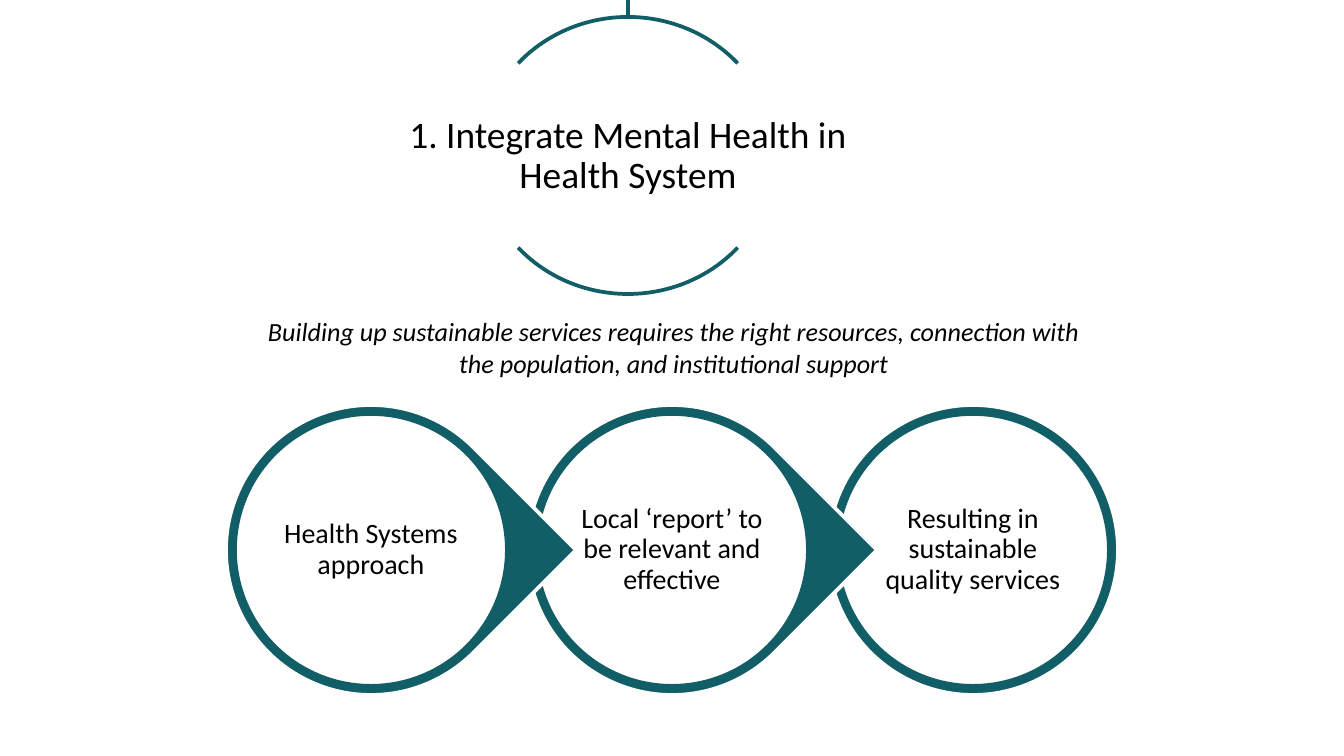
from lxml import etree
from pptx import Presentation
from pptx import util as u
from pptx.dml.color import RGBColor
from pptx.enum import shapes, text
from pptx.oxml.ns import qn

TITLE = "1. Integrate Mental Health in Health System"
SUBTITLE = ("Building up sustainable services requires the right resources, "
            "connection with the population, and institutional support")
STEPS = [
    "Health Systems approach",
    "Local ‘report’ to be relevant and effective",
    "Resulting in sustainable quality services",
]
COLORS = {"teal": "115E67", "white": "FFFFFF", "black": "000000"}
FONT = "Calibri"

PX = 914400 / 134.4
CENTER_X = 628                         # axis of the title arcs
ARC_TOP, ARC_W, ARC_H = 17, 294, 277
ARC_ANGLES = [(220, 320), (40, 140)]   # upper arc, lower arc
TITLE_BOX = (407, 90, 442, 133)
SUBTITLE_BOX = (241, 309, 866, 77)
STEP_X, STEP_Y, STEP_GAP = 371, 550, 301
OUTER, INNER = 290, 272


def px(n):
    return u.Emu(round(n * PX))


def color(name):
    return RGBColor.from_string(COLORS[name])


def centered(x, y, w, h):
    return x - w / 2, y - h / 2, w, h


def add_shape(kind, box, fill=None, line="teal", width=2):
    sp = slide.shapes.add_shape(kind, *map(px, box))
    sp.shadow.inherit = False
    if fill:
        sp.fill.solid()
        sp.fill.fore_color.rgb = color(fill)
    else:
        sp.fill.background()
    sp.line.color.rgb = color(line)
    sp.line.width = u.Pt(width)
    return sp


def write(sp, content, size, italic=False, spacing=None, inset=None,
          anchor=text.MSO_ANCHOR.MIDDLE):
    tf = sp.text_frame
    tf.word_wrap = True
    tf.vertical_anchor = anchor
    if inset is not None:
        tf.margin_left = tf.margin_right = px(inset)
        tf.margin_top = tf.margin_bottom = px(inset)
    p = tf.paragraphs[0]
    p.alignment = text.PP_ALIGN.CENTER
    if spacing:
        p.line_spacing = spacing
    r = p.add_run()
    r.text = content
    r.font.name = FONT
    r.font.size = u.Pt(size)
    r.font.italic = italic
    r.font.color.rgb = color("black")


prs = Presentation()
prs.slide_width, prs.slide_height = px(1344), px(756)
slide = prs.slides.add_slide(prs.slide_layouts[6])

stem = slide.shapes.add_connector(
    shapes.MSO_CONNECTOR.STRAIGHT, px(CENTER_X), 0, px(CENTER_X), px(ARC_TOP))
stem.line.color.rgb = color("teal")
stem.line.width = u.Pt(1.75)
etree.SubElement(stem._element.spPr, qn("a:effectLst"))

for angles in ARC_ANGLES:
    arc = add_shape(shapes.MSO_SHAPE.ARC,
                    (CENTER_X - ARC_W / 2, ARC_TOP, ARC_W, ARC_H))
    for i, degrees in enumerate(angles):
        arc.adjustments[i] = degrees * 0.6   # 60000 units per degree

title = slide.shapes.add_textbox(*map(px, TITLE_BOX))
write(title, TITLE, 20, spacing=0.9, inset=2)

# Drawn from right to left, so that each point lies over the next ring
last = len(STEPS) - 1
for i, label in reversed(list(enumerate(STEPS))):
    x = STEP_X + i * STEP_GAP
    kind = shapes.MSO_SHAPE.OVAL if i == last else shapes.MSO_SHAPE.TEAR
    ring = add_shape(kind, centered(x, STEP_Y, OUTER, OUTER), "teal", "white")
    if i != last:
        ring.rotation = 45
    disc = add_shape(shapes.MSO_SHAPE.OVAL,
                     centered(x, STEP_Y, INNER, INNER), "white")
    write(disc, label, 15, spacing=0.9, inset=2)

subtitle = slide.shapes.add_textbox(*map(px, SUBTITLE_BOX))
write(subtitle, SUBTITLE, 14, italic=True, anchor=text.MSO_ANCHOR.TOP)

prs.save("out.pptx")
